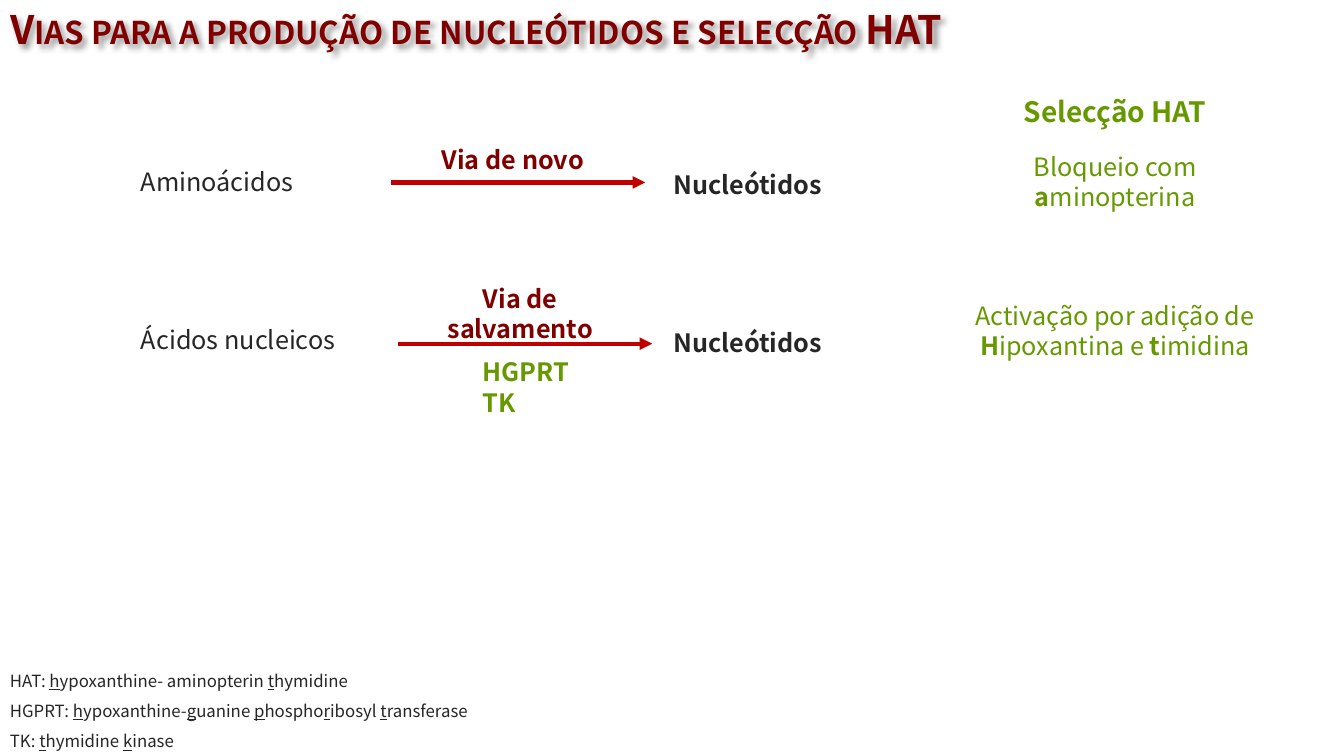
from lxml import etree
from pptx import Presentation
from pptx.dml.color import RGBColor
from pptx.enum.shapes import MSO_CONNECTOR
from pptx.enum.text import MSO_ANCHOR, MSO_AUTO_SIZE, PP_ALIGN
from pptx.oxml import parse_xml
from pptx.oxml.ns import qn
from pptx.util import Inches, Pt

LEFT, CENTER, JUSTIFY = PP_ALIGN.LEFT, PP_ALIGN.CENTER, PP_ALIGN.JUSTIFY
TOP = MSO_ANCHOR.TOP
FIXED = MSO_AUTO_SIZE.NONE
STRAIGHT = MSO_CONNECTOR.STRAIGHT
FONT = "Noto Sans CJK SC"
DARK, MAROON, RED, GREEN = "262626", "800000", "C00000", "669900"
DRAWING = "http://schemas.openxmlformats.org/drawingml/2006/main"

# Content: an asterisk on each side marks emphasised letters
TITLE = "Vias para a produção de nucleótidos e selecção HAT"
HEADING = "Selecção HAT"
PATHWAYS = [
    {"source": "Aminoácidos", "route": "Via de novo", "enzymes": [],
     "selection": "Bloqueio com *a*minopterina"},
    {"source": "Ácidos nucleicos", "route": "Via de salvamento",
     "enzymes": ["HGPRT", "TK"],
     "selection": "Activação por adição de *H*ipoxantina e *t*imidina"},
]
PRODUCT = "Nucleótidos"
GLOSSARY = [
    "HAT: *h*ypoxanthine- aminopterin *t*hymidine",
    "HGPRT: *h*ypoxanthine-*g*uanine *p*hospho*r*ibosyl *t*ransferase",
    "TK: *t*hymidine *k*inase",
]

# Layout in inches: pathway rows and columns
ROW_TOP, ROW_STEP, LINE_HEIGHT = 1.6, 1.57, 0.4
SOURCE_X, PRODUCT_X, ENZYME_X = 1.3, 6.58, 4.69
ARROW_LENGTH = 2.52
ARROWS = [(3.88, 1.81), (3.95, 3.41)]
ROUTE_BOXES = [(4.11, 1.38, 1.95, 0.4), (4.21, 2.76, 1.9, 0.71)]
SELECTION_CENTER = 11.06
SELECTION_BOXES = [(1.45, 2.31, 0.71), (2.93, 3.06, 1.01)]


def color(value):
    return RGBColor.from_string(value)


def style(span, size, hue, bold=False):
    span.font.name = FONT
    span.font.size = Pt(size)
    span.font.bold = bold
    span.font.color.rgb = color(hue)


def add_text(page, lines, place, size=18, hue=DARK, bold=False, align=LEFT,
             wrap=True, underline=False, spacing=None):
    box = page.shapes.add_textbox(*map(Inches, place))
    frame = box.text_frame
    frame.word_wrap = wrap
    frame.text = "\n".join(line.replace("*", "") for line in lines)
    for para, line in zip(frame.paragraphs, lines):
        para.alignment = align
        if spacing:
            para.line_spacing = spacing
        pieces = line.split("*")
        para.runs[0].text = pieces[0]
        for piece in pieces[1:]:
            para.add_run().text = piece
        for index, span in enumerate(para.runs):
            marked = index % 2 == 1
            style(span, size, hue, bold or (marked and not underline))
            if marked and underline:
                span.font.underline = True


def add_arrow(page, x, y):
    arrow = page.shapes.add_connector(
        STRAIGHT, Inches(x), Inches(y), Inches(x + ARROW_LENGTH), Inches(y))
    arrow.line.color.rgb = color(RED)
    arrow.line.width = Pt(3)
    etree.SubElement(arrow.line._get_or_add_ln(), qn("a:tailEnd"), type="triangle")
    etree.SubElement(arrow._element.spPr, qn("a:effectLst"))


def add_title(page):
    title = page.shapes.title
    title.left, title.top = Inches(0), Inches(0)
    title.width, title.height = Inches(11.04), Inches(0.57)
    frame = title.text_frame
    frame.text = TITLE
    frame.word_wrap = True
    frame.auto_size = FIXED
    frame.vertical_anchor = TOP
    para = frame.paragraphs[0]
    para.alignment = JUSTIFY
    para.line_spacing = 1.0
    span = para.runs[0]
    style(span, 28, MAROON, bold=True)
    span.font._element.set("cap", "small")
    # Soft shadow behind the letters
    title._element.spPr.append(parse_xml(
        f'<a:effectLst xmlns:a="{DRAWING}">'
        '<a:outerShdw blurRad="50800" dist="38100" dir="2700000">'
        '<a:srgbClr val="000000"><a:alpha val="40000"/></a:srgbClr>'
        '</a:outerShdw></a:effectLst>'))


def main():
    deck = Presentation()
    deck.slide_width, deck.slide_height = Inches(13.33), Inches(7.5)
    page = deck.slides.add_slide(deck.slide_layouts[5])
    add_title(page)

    # Column heading
    add_text(page, [HEADING], (SELECTION_CENTER - 1.19, 0.89, 2.38, 0.44),
             size=20, hue=GREEN, bold=True, align=CENTER)

    # One row per pathway
    for row, pathway in enumerate(PATHWAYS):
        top = ROW_TOP + row * ROW_STEP
        add_text(page, [pathway["source"]],
                 (SOURCE_X, top, (1.77, 2.21)[row], LINE_HEIGHT), wrap=False)
        add_text(page, [PRODUCT], (PRODUCT_X, top + 0.03, 1.74, LINE_HEIGHT),
                 bold=True, wrap=False)
        add_text(page, [pathway["route"]], ROUTE_BOXES[row],
                 hue=MAROON, bold=True, align=CENTER)
        y, width, height = SELECTION_BOXES[row]
        add_text(page, [pathway["selection"]],
                 (SELECTION_CENTER - width / 2, y, width, height),
                 hue=GREEN, align=CENTER)
        if pathway["enzymes"]:
            add_text(page, pathway["enzymes"], (ENZYME_X, 3.49, 1.1, 0.71),
                     hue=GREEN, bold=True, wrap=False)
        add_arrow(page, *ARROWS[row])

    # Abbreviations
    add_text(page, GLOSSARY, (0, 6.5, 6.81, 1.01), size=12,
             underline=True, spacing=1.5)
    deck.save("out.pptx")


if __name__ == "__main__":
    main()
